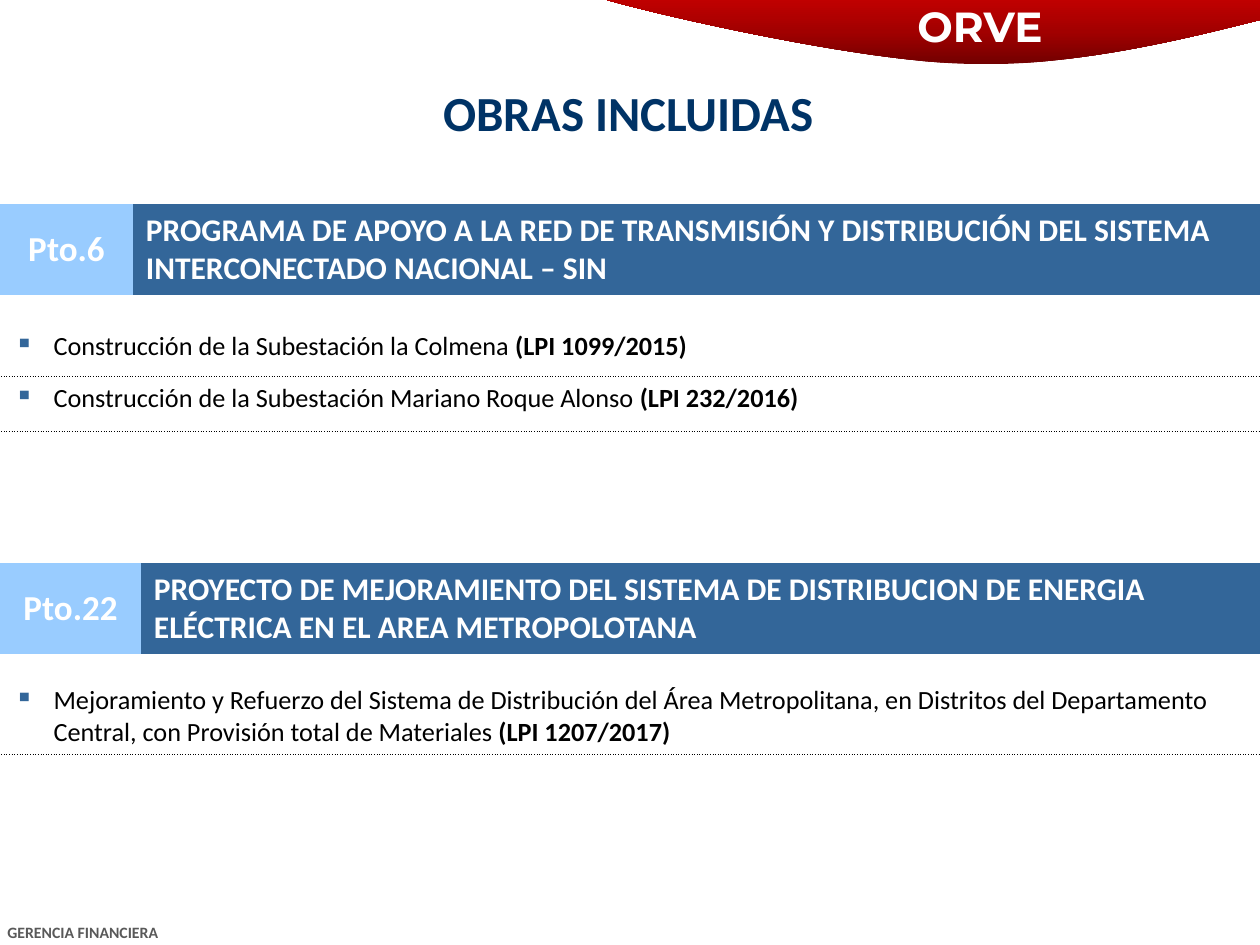
import copy

import lxml.etree
import pptx
import pptx.dml.color
import pptx.enum.text
import pptx.oxml
import pptx.oxml.ns
import pptx.util

PX_PER_INCH = 126
WIDTH, HEIGHT = 1260, 945
COLORS = {
    "white": "FFFFFF", "black": "000000", "navy": "003366", "blue": "336699",
    "sky": "99CCFF", "gray": "595959",
    "red_dark": "720000", "red_mid": "A20000", "red": "C00000",
}
CENTER = pptx.enum.text.PP_ALIGN.CENTER
LEFT = pptx.enum.text.PP_ALIGN.LEFT
HAIRLINE = ("black", 0.25, "sysDot")
WHITE_LINE = ("white", 1, "solid")


def emu(px):
    return pptx.util.Emu(round(px * 914400 / PX_PER_INCH))


def rgb(name):
    return pptx.dml.color.RGBColor.from_string(COLORS[name])


def add_span(para, text, size, color, bold=False, face="Calibri"):
    span = para.add_run()
    span.text = text
    span.font.size = pptx.util.Pt(size)
    span.font.name = face
    span.font.bold = bold
    span.font.color.rgb = rgb(color)


def add_label(page, place, text, size, color, align=LEFT, face="Calibri"):
    box = page.shapes.add_textbox(*map(emu, place))
    box.text_frame.word_wrap = True
    para = box.text_frame.paragraphs[0]
    para.alignment = align
    add_span(para, text, size, color, True, face)


def bezier(start, first, second, end, steps=24):
    """Points along a cubic curve, without its start."""
    for step in range(1, steps + 1):
        t = step / steps
        weights = ((1 - t) ** 3, 3 * t * (1 - t) ** 2, 3 * t * t * (1 - t), t ** 3)
        yield tuple(
            sum(w * point[axis] for w, point in zip(weights, (start, first, second, end)))
            for axis in (0, 1)
        )


def add_banner(page):
    start, low, end = (604, -1), (969, 64), (WIDTH, 20)
    points = [
        *bezier(start, (641, 11), (859, 62), low),
        *bezier(low, (1079, 68), (1211, 32), end),
        (WIDTH, 0),
    ]
    builder = page.shapes.build_freeform(emu(start[0]), emu(start[1]))
    builder.add_line_segments([(emu(x), emu(y)) for x, y in points], close=True)
    banner = builder.convert_to_shape()
    banner.shadow.inherit = False
    banner.line.fill.background()
    banner.fill.gradient()
    banner.fill.gradient_angle = 90
    stop_list = banner.fill.gradient_stops[0]._gs.getparent()
    stop_list.insert(1, copy.deepcopy(stop_list[0]))
    shades = ((0, "red_dark"), (0.5, "red_mid"), (1, "red"))
    for stop, (position, color) in zip(banner.fill.gradient_stops, shades):
        stop.position = position
        stop.color.rgb = rgb(color)


def set_borders(cell, left=None, right=None, top=None, bottom=None):
    """Each side is (color, points, dash), or None for no line."""
    props = cell._tc.get_or_add_tcPr()
    for side, style in zip("LRTB", (left, right, top, bottom)):
        line = lxml.etree.SubElement(props, pptx.oxml.ns.qn(f"a:ln{side}"))
        if style is None:
            lxml.etree.SubElement(line, pptx.oxml.ns.qn("a:noFill"))
            continue
        color, points, dash = style
        line.set("w", str(pptx.util.Pt(points)))
        fill = lxml.etree.SubElement(line, pptx.oxml.ns.qn("a:solidFill"))
        lxml.etree.SubElement(fill, pptx.oxml.ns.qn("a:srgbClr"), val=COLORS[color])
        lxml.etree.SubElement(line, pptx.oxml.ns.qn("a:prstDash"), val=dash)


def add_grid(page, left, top, widths, heights):
    frame = page.shapes.add_table(
        len(heights), len(widths), emu(left), emu(top), emu(sum(widths)), emu(sum(heights))
    )
    grid = frame.table
    grid.first_row = grid.horz_banding = False
    for column, width in zip(grid.columns, widths):
        column.width = emu(width)
    for row, height in zip(grid.rows, heights):
        row.height = emu(height)
    return grid


def add_heading(page, top, tag_width, tag, title):
    grid = add_grid(page, 0, top, (tag_width, WIDTH - tag_width), (91,))
    parts = ((tag, 20, "sky", CENTER), (title, 18, "blue", LEFT))
    for cell, (text, size, color, align) in zip(grid.rows[0].cells, parts):
        set_borders(cell)
        cell.fill.solid()
        cell.fill.fore_color.rgb = rgb(color)
        cell.vertical_anchor = pptx.enum.text.MSO_ANCHOR.MIDDLE
        cell.margin_left = cell.margin_right = cell.margin_top = emu(1)
        cell.margin_bottom = 0
        para = cell.text_frame.paragraphs[0]
        para.alignment = align
        if align == LEFT:
            para._p.get_or_add_pPr().set("marL", str(emu(12)))
        add_span(para, text, size, "white", True)


def add_bullet(para):
    props = para._p.get_or_add_pPr()
    props.set("marL", str(emu(39)))
    props.set("indent", str(-emu(39)))
    color = lxml.etree.SubElement(props, pptx.oxml.ns.qn("a:buClr"))
    lxml.etree.SubElement(color, pptx.oxml.ns.qn("a:srgbClr"), val=COLORS["blue"])
    lxml.etree.SubElement(props, pptx.oxml.ns.qn("a:buChar"), char="▪")


def add_works(page, top, heights, works):
    grid = add_grid(page, 2, top, (WIDTH - 2,), heights)
    for index, (work, tender) in enumerate(works):
        cell = grid.cell(index, 0)
        set_borders(cell, WHITE_LINE, WHITE_LINE, HAIRLINE if index else WHITE_LINE, HAIRLINE)
        cell.fill.background()
        para = cell.text_frame.paragraphs[0]
        add_bullet(para)
        add_span(para, work + " ", 15, "black")
        add_span(para, tender, 15, "black", True)


def main():
    deck = pptx.Presentation()
    deck.slide_width, deck.slide_height = emu(WIDTH), emu(HEIGHT)
    page = deck.slides.add_slide(deck.slide_layouts[6])

    add_banner(page)
    add_label(page, (898, -6, 164, 63), "ORVE", 24, "white", CENTER, "Montserrat")
    add_label(page, (-5, 917, 436, 32), "GERENCIA FINANCIERA", 9, "gray")

    add_heading(
        page, 204, 133, "Pto.6",
        "PROGRAMA DE APOYO A LA RED DE TRANSMISIÓN Y DISTRIBUCIÓN DEL SISTEMA "
        "INTERCONECTADO NACIONAL – SIN",
    )
    add_works(page, 324, (52, 55), (
        ("Construcción de la Subestación la Colmena", "(LPI 1099/2015)"),
        ("Construcción de la Subestación Mariano Roque Alonso", "(LPI 232/2016)"),
    ))
    add_heading(
        page, 563, 141, "Pto.22",
        "PROYECTO DE MEJORAMIENTO DEL SISTEMA DE DISTRIBUCION DE ENERGIA "
        "ELÉCTRICA EN EL AREA METROPOLOTANA",
    )
    add_works(page, 678, (76,), (
        ("Mejoramiento y Refuerzo del Sistema de Distribución del Área Metropolitana, "
         "en Distritos del Departamento Central, con Provisión total de Materiales",
         "(LPI 1207/2017)"),
    ))
    add_label(page, (0, 76, 1257, 69), "OBRAS INCLUIDAS", 28, "navy", CENTER)

    deck.save("out.pptx")


if __name__ == "__main__":
    main()
